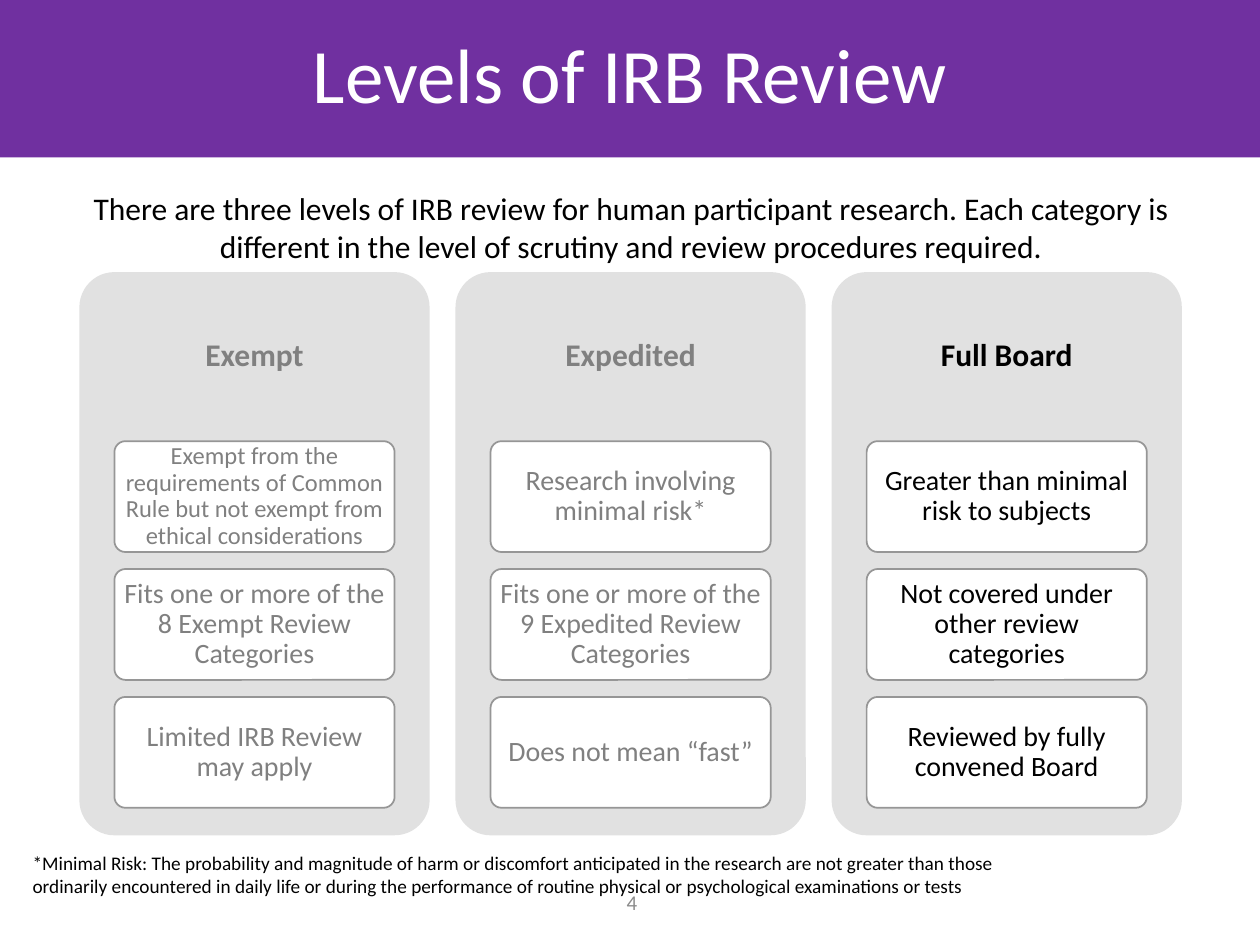
from pptx import Presentation
from pptx.dml.color import RGBColor
from pptx.enum.shapes import MSO_SHAPE as Shape
from pptx.enum.text import MSO_ANCHOR as Anchor, PP_ALIGN as Align
from pptx.util import Inches, Pt

TITLE = "Levels of IRB Review"
INTRO = ("There are three levels of IRB review for human participant research. "
         "Each category is different in the level of scrutiny and review "
         "procedures required.")
FOOTNOTE = ("*Minimal Risk: The probability and magnitude of harm or discomfort "
            "anticipated in the research are not greater than those ordinarily "
            "encountered in daily life or during the performance of routine "
            "physical or psychological examinations or tests")
PAGE_NUMBER = "4"

# Level name, text colour, (card text, size) from top to bottom
LEVELS = [
    ("Exempt", "muted", [
        ("Exempt from the requirements of Common Rule but not exempt from "
         "ethical considerations", 14),
        ("Fits one or more of the 8 Exempt Review Categories", 16),
        ("Limited IRB Review may apply", 16)]),
    ("Expedited", "muted", [
        ("Research involving minimal risk*", 16),
        ("Fits one or more of the 9 Expedited Review Categories", 16),
        ("Does not mean “fast”", 16)]),
    ("Full Board", "black", [
        ("Greater than minimal risk to subjects", 16),
        ("Not covered under other review categories", 16),
        ("Reviewed by fully convened Board", 16)]),
]

COLORS = {"purple": "7030A0", "white": "FFFFFF", "black": "000000",
          "muted": "808080", "number": "8C8C8C", "panel": "E1E1E1",
          "border": "969696"}
FONT = "Calibri"
WIDTH, HEIGHT = 10, 7.5

PANEL_LEFT, PANEL_TOP = 0.63, 2.16
PANEL_WIDTH, PANEL_HEIGHT = 2.78, 4.47
PANEL_PITCH = 2.985
HEADER_HEIGHT = 0.3 * PANEL_HEIGHT
CARD_WIDTH, CARD_HEIGHT = 0.8 * PANEL_WIDTH, 0.88
CARD_INDENT = 0.1 * PANEL_WIDTH
CARD_PITCH = 1.015
CORNER = 0.1


def color(name):
    return RGBColor.from_string(COLORS[name])


def write(shape, text, size, tint, align=Align.CENTER, anchor=Anchor.MIDDLE,
          insets=(0.1, 0.05), bold=False, spacing=None):
    frame = shape.text_frame
    frame.word_wrap = True
    frame.vertical_anchor = anchor
    frame.margin_left = frame.margin_right = Inches(insets[0])
    frame.margin_top = frame.margin_bottom = Inches(insets[1])
    para = frame.paragraphs[0]
    para.alignment = align
    if spacing:
        para.line_spacing = spacing
    span = para.add_run()
    span.text = text
    span.font.name = FONT
    span.font.size = Pt(size)
    span.font.bold = bold
    span.font.color.rgb = color(tint)


def add_block(page, kind, area, fill, border=None):
    shape = page.shapes.add_shape(kind, *map(Inches, area))
    shape.shadow.inherit = False
    shape.fill.solid()
    shape.fill.fore_color.rgb = color(fill)
    if kind == Shape.ROUNDED_RECTANGLE:
        shape.adjustments[0] = CORNER
    if border:
        shape.line.color.rgb = color(border)
        shape.line.width = Pt(1)
    else:
        shape.line.fill.background()
    return shape


def add_text(page, area, *args, **options):
    write(page.shapes.add_textbox(*map(Inches, area)), *args, **options)


def add_level(page, left, name, tint, cards):
    add_block(page, Shape.ROUNDED_RECTANGLE,
              (left, PANEL_TOP, PANEL_WIDTH, PANEL_HEIGHT), "panel")
    add_text(page, (left, PANEL_TOP, PANEL_WIDTH, HEADER_HEIGHT), name, 18, tint,
             insets=(0.07, 0.07), bold=True, spacing=0.9)
    for row, (text, size) in enumerate(cards):
        top = PANEL_TOP + HEADER_HEIGHT + row * CARD_PITCH
        card = add_block(page, Shape.ROUNDED_RECTANGLE,
                         (left + CARD_INDENT, top, CARD_WIDTH, CARD_HEIGHT),
                         "white", "border")
        write(card, text, size, tint, insets=(0.04, 0.03), spacing=0.9)


def main():
    deck = Presentation()
    deck.slide_width, deck.slide_height = Inches(WIDTH), Inches(HEIGHT)
    page = deck.slides.add_slide(deck.slide_layouts[6])

    banner = add_block(page, Shape.RECTANGLE, (0, 0, WIDTH, HEIGHT / 6), "purple")
    write(banner, TITLE, 44, "white", spacing=0.9)
    add_text(page, (4.68, 6.96, 0.67, 0.4), PAGE_NUMBER, 12, "number")
    add_text(page, (0.35, 1.45, 9.32, 0.71), INTRO, 18, "black", anchor=Anchor.TOP)
    for column, level in enumerate(LEVELS):
        add_level(page, PANEL_LEFT + column * PANEL_PITCH, *level)
    add_text(page, (0.16, 6.71, 7.92, 0.47), FOOTNOTE, 11, "black",
             align=Align.LEFT, anchor=Anchor.TOP)

    deck.save("out.pptx")


if __name__ == "__main__":
    main()
